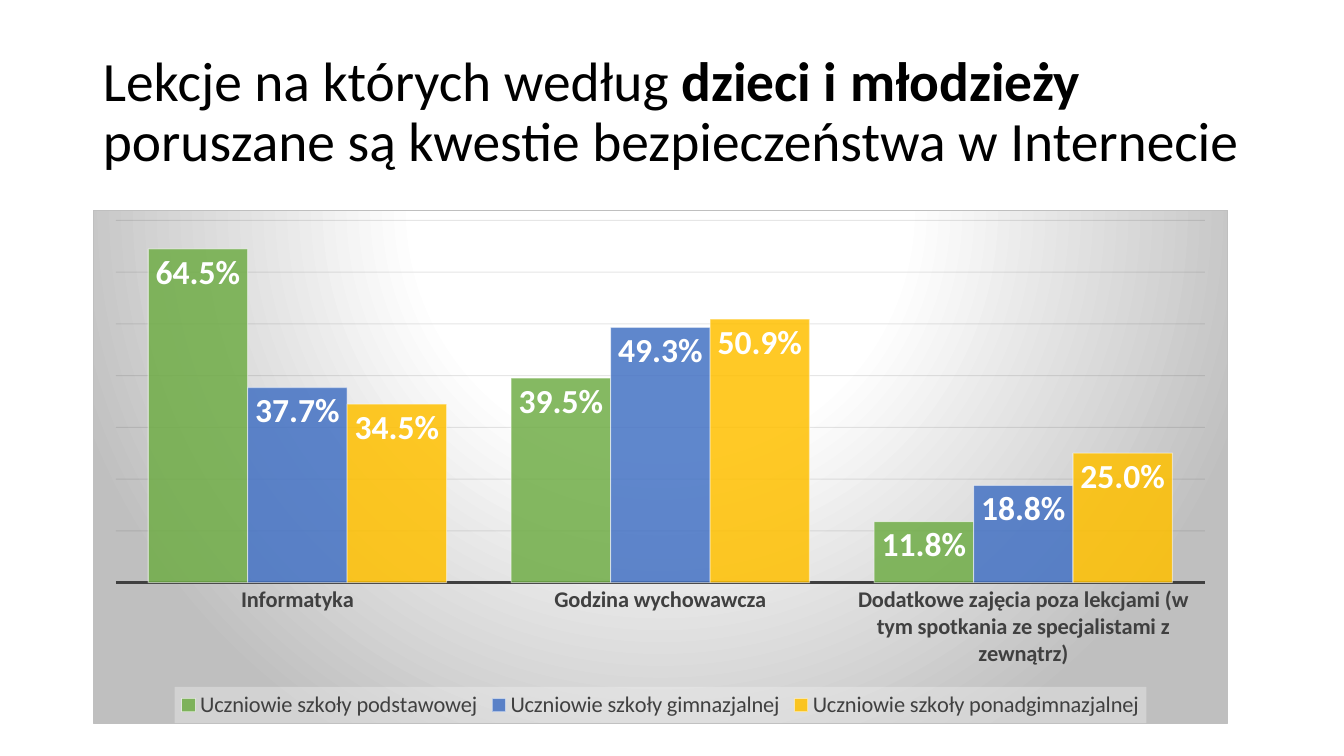
from lxml import etree
from pptx import Presentation
from pptx import util as u
from pptx.chart.data import CategoryChartData
from pptx.dml.color import RGBColor
from pptx.enum import chart as ch, text
from pptx.oxml import parse_xml
from pptx.oxml.ns import nsdecls, qn

# Content
TITLE = [
    ("Lekcje na których według ", False),
    ("dzieci i młodzieży ", True),
    ("poruszane są kwestie bezpieczeństwa w Internecie", False),
]
LESSONS = [
    "Informatyka",
    "Godzina wychowawcza",
    "Dodatkowe zajęcia poza lekcjami (w tym spotkania ze specjalistami z zewnątrz)",
]
GREEN, BLUE, GOLD = (RGBColor.from_string(c) for c in ("70AD47", "4472C4", "FFC000"))
PUPILS = [
    ("Uczniowie szkoły podstawowej", (0.645, 0.395, 0.118), GREEN),
    ("Uczniowie szkoły gimnazjalnej", (0.377, 0.493, 0.188), BLUE),
    ("Uczniowie szkoły ponadgimnazjalnej", (0.345, 0.509, 0.25), GOLD),
]
BLACK = RGBColor(0, 0, 0)
WHITE = RGBColor(0xFF, 0xFF, 0xFF)
DARK = RGBColor(0x40, 0x40, 0x40)
GRID = RGBColor(0x0D, 0x0D, 0x0D)
FONT = "Calibri"
PERCENT = "0.0%"


def style(font, size, color, bold=False):
    font.name, font.size, font.bold = FONT, u.Pt(size), bold
    font.color.rgb = color


def set_line(line, color, width):
    line.color.rgb = color
    line.width = u.Pt(width)


def set_alpha(element, percent):
    for color in element.iter(qn("a:srgbClr")):
        etree.SubElement(color, qn("a:alpha")).set("val", str(percent * 1000))


deck = Presentation()
deck.slide_width, deck.slide_height = u.Inches(13.33), u.Inches(7.5)
page = deck.slides.add_slide(deck.slide_layouts[5])

# Title
title = page.shapes.title
title.left, title.top = u.Inches(0.92), u.Inches(0.4)
title.width, title.height = u.Inches(11.5), u.Inches(1.45)
frame = title.text_frame
frame.word_wrap = True
frame.auto_size = text.MSO_AUTO_SIZE.NONE
frame.vertical_anchor = text.MSO_ANCHOR.MIDDLE
para = frame.paragraphs[0]
para.alignment = text.PP_ALIGN.LEFT
para.line_spacing = 0.9
for words, bold in TITLE:
    span = para.add_run()
    span.text = words
    style(span.font, 39.6, BLACK, bold)

# Chart
data = CategoryChartData(number_format=PERCENT)
data.categories = LESSONS
for name, shares, _ in PUPILS:
    data.add_series(name, shares)
chart = page.shapes.add_chart(
    ch.XL_CHART_TYPE.COLUMN_CLUSTERED,
    u.Inches(0.92), u.Inches(2.08), u.Inches(11.26), u.Inches(5.1), data).chart
chart.has_title = False
style(chart.font, 10, BLACK)
plot = chart.plots[0]
plot.gap_width, plot.overlap, plot.vary_by_categories = 65, 0, False

# Columns and their labels
for series, (_, _, color) in zip(plot.series, PUPILS):
    series.format.fill.solid()
    series.format.fill.fore_color.rgb = color
    set_alpha(series.format.fill._xPr, 85)
    set_line(series.format.line, WHITE, 0.75)
    set_alpha(series.format.line._ln, 50)
    labels = series.data_labels
    labels.show_value = True
    labels.number_format, labels.number_format_is_linked = PERCENT, False
    labels.position = ch.XL_LABEL_POSITION.INSIDE_END
    style(labels.font, 24, WHITE, True)

# Axes
lessons_axis, share_axis = chart.category_axis, chart.value_axis
lessons_axis.major_tick_mark = ch.XL_TICK_MARK.NONE
style(lessons_axis.tick_labels.font, 16, DARK, True)
set_line(lessons_axis.format.line, DARK, 1.5)
share_axis.minimum_scale, share_axis.maximum_scale = 0, 0.7
share_axis.major_unit = 0.1
share_axis.tick_labels.number_format = PERCENT
share_axis.tick_labels.number_format_is_linked = False
share_axis.visible = False
share_axis.has_major_gridlines = True
grid_line = share_axis.major_gridlines.format.line
set_line(grid_line, GRID, 0.75)
set_alpha(grid_line._ln, 10)

# Legend on a translucent panel
chart.has_legend = True
legend = chart.legend
legend.position = ch.XL_LEGEND_POSITION.BOTTOM
legend.include_in_layout = False
style(legend.font, 16, DARK)
panel = parse_xml(
    f'<c:spPr {nsdecls("c", "a")}><a:solidFill><a:srgbClr val="F2F2F2">'
    '<a:alpha val="39000"/></a:srgbClr></a:solidFill></c:spPr>')
legend._element.find(qn("c:txPr")).addprevious(panel)

# Plot position as fractions of the chart
plot_area = chart._chartSpace.chart.plotArea
for old in plot_area.findall(qn("c:layout")):
    plot_area.remove(old)
bounds = "".join(f'<c:{key} val="{value}"/>' for key, value in (
    ("layoutTarget", "inner"), ("xMode", "edge"), ("yMode", "edge"),
    ("x", 0.02), ("y", 0.02), ("w", 0.96), ("h", 0.706)))
plot_area.insert(0, parse_xml(
    f'<c:layout {nsdecls("c")}><c:manualLayout>{bounds}</c:manualLayout></c:layout>'))

# Radial background and border
stops = "".join(
    f'<a:gs pos="{pos * 1000}"><a:srgbClr val="{color}"/></a:gs>'
    for pos, color in ((0, "FFFFFF"), (39, "FFFFFF"), (100, "BFBFBF")))
background = parse_xml(
    f'<c:spPr {nsdecls("c", "a")}><a:gradFill><a:gsLst>{stops}</a:gsLst>'
    '<a:path path="circle">'
    '<a:fillToRect l="50000" t="-80000" r="50000" b="180000"/></a:path></a:gradFill>'
    '<a:ln w="9525"><a:solidFill><a:srgbClr val="BFBFBF"/></a:solidFill></a:ln></c:spPr>')
chart._chartSpace.chart.addnext(background)

deck.save("out.pptx")
